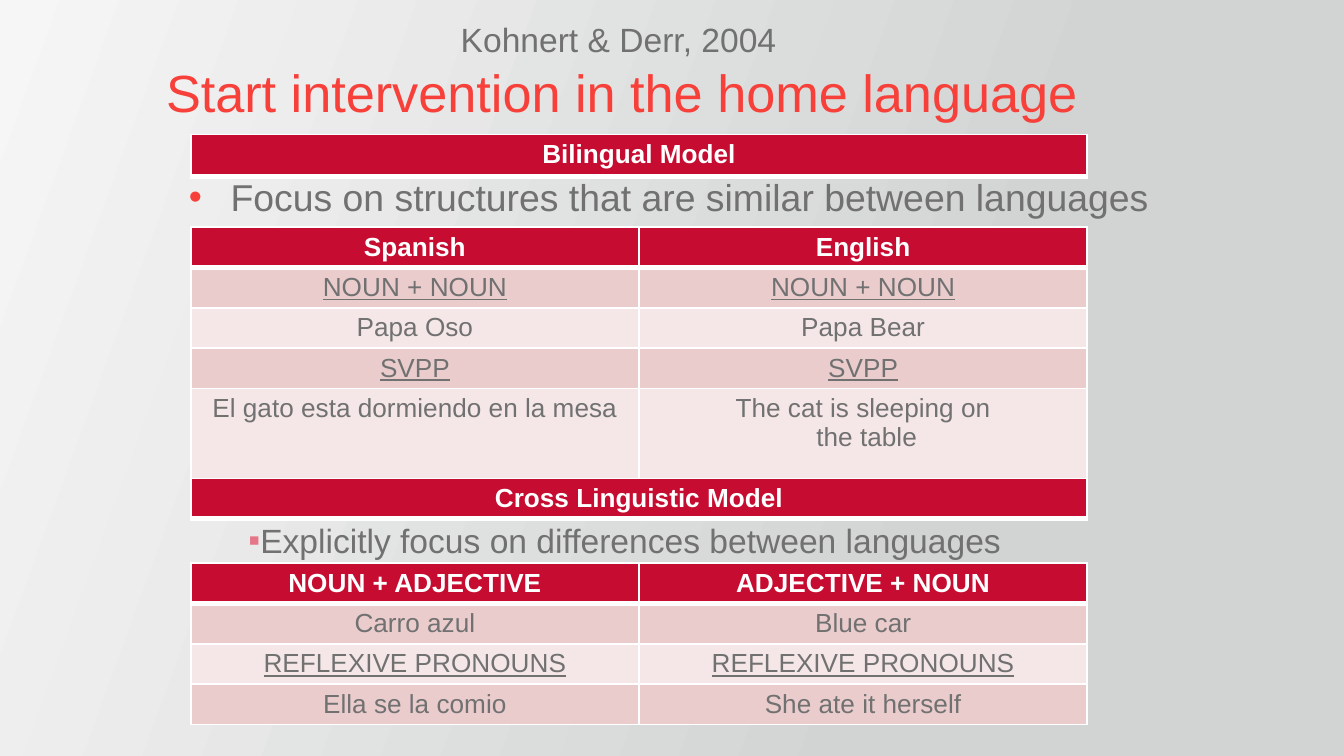
from dataclasses import dataclass
from typing import Optional

from lxml.etree import SubElement
from pptx import Presentation
from pptx.dml.color import RGBColor
from pptx.enum.text import MSO_ANCHOR, PP_ALIGN
from pptx.oxml.ns import qn
from pptx.util import Inches, Pt

RED = RGBColor(0xF7, 0x40, 0x3A)
CRIMSON = RGBColor(0xC6, 0x0C, 0x30)
PINK = RGBColor(0xE4, 0x76, 0x88)
ROSE = RGBColor(0xEA, 0xCC, 0xCD)
BLUSH = RGBColor(0xF5, 0xE7, 0xE8)
GRAY = RGBColor(0x71, 0x71, 0x71)
WHITE = RGBColor(0xFF, 0xFF, 0xFF)
PALE = RGBColor(0xF6, 0xF6, 0xF6)
SILVER = RGBColor(0xD1, 0xD4, 0xD3)

LEFT, WIDTH, ROW = 1.42, 6.67, 0.3


@dataclass
class Grid:
    top: float
    rows: list[tuple[str, ...]]
    heights: list[float]


@dataclass
class Bullet:
    sign: str
    color: RGBColor
    margin: float = 0
    indent: float = 0


@dataclass
class Note:
    text: str
    box: tuple[float, float, float, float]
    size: int
    align: PP_ALIGN = PP_ALIGN.LEFT
    bullet: Optional[Bullet] = None


GRIDS = [
    Grid(1, [("Bilingual Model",)], [0.31]),
    Grid(1.69, [
        ("Spanish", "English"),
        ("NOUN + NOUN", "NOUN + NOUN"),
        ("Papa Oso", "Papa Bear"),
        ("SVPP", "SVPP"),
        ("El gato esta dormiendo en la mesa",
         "The cat is sleeping on\n the table"),
    ], [ROW] * 4 + [0.75]),
    Grid(3.56, [("Cross Linguistic Model",)], [ROW]),
    Grid(4.19, [
        ("NOUN + ADJECTIVE", "ADJECTIVE + NOUN"),
        ("Carro azul", "Blue car"),
        ("REFLEXIVE PRONOUNS", "REFLEXIVE PRONOUNS"),
        ("Ella se la comio", "She ate it herself"),
    ], [ROW] * 4),
]

NOTES = [
    Note("Focus on structures that are similar between languages",
         (0.6, 1.25, 8.26, 0.42), 20, PP_ALIGN.CENTER,
         Bullet("•", RED, 0.81, -0.31)),
    Note("Explicitly focus on differences between languages",
         (1.75, 3.82, 5.95, 0.39), 18, bullet=Bullet("▪", PINK)),
    Note("Kohnert & Derr, 2004", (3.33, 0.09, 3, 0.4), 18),
]


def style(para, size: int, color: RGBColor, align: PP_ALIGN) -> None:
    para.alignment = align
    para.font.name = "Arial"
    para.font.size = Pt(size)
    para.font.color.rgb = color


def place(shape, box: tuple[float, float, float, float]) -> None:
    shape.left, shape.top, shape.width, shape.height = map(Inches, box)


def add_bullet(para, bullet: Bullet) -> None:
    props = para._p.get_or_add_pPr()
    props.set("marL", str(Inches(bullet.margin)))
    props.set("indent", str(Inches(bullet.indent)))
    tint = SubElement(props, qn("a:buClr"))
    SubElement(tint, qn("a:srgbClr"), val=str(bullet.color))
    SubElement(props, qn("a:buFont"), typeface="Arial")
    SubElement(props, qn("a:buChar"), char=bullet.sign)


def add_note(slide, note: Note) -> None:
    frame = slide.shapes.add_textbox(*map(Inches, note.box)).text_frame
    frame.word_wrap = True
    para = frame.paragraphs[0]
    para.text = note.text
    if note.bullet:
        add_bullet(para, note.bullet)
    style(para, note.size, GRAY, note.align)


def add_edges(cell, base: int) -> None:
    """Draw white cell borders, with the bottom one base points wide."""
    props = cell._tc.get_or_add_tcPr()
    for side, width in (("L", 1), ("R", 1), ("T", 1), ("B", base)):
        line = SubElement(props, qn(f"a:ln{side}"), w=str(Pt(width)))
        fill = SubElement(line, qn("a:solidFill"))
        SubElement(fill, qn("a:srgbClr"), val=str(WHITE))


def fill_cell(cell, text: str, row: int) -> None:
    head = row == 0
    cell.text = text
    cell.margin_left = cell.margin_right = Inches(0.1)
    cell.margin_top = cell.margin_bottom = Inches(0.04)
    add_edges(cell, 3 if head else 1)
    cell.fill.solid()
    cell.fill.fore_color.rgb = CRIMSON if head else (BLUSH, ROSE)[row % 2]
    for para in cell.text_frame.paragraphs:
        style(para, 14, WHITE if head else GRAY, PP_ALIGN.CENTER)
        para.font.bold = head
        para.font.underline = not head and text.isupper()


def add_grid(slide, grid: Grid) -> None:
    table = slide.shapes.add_table(
        len(grid.rows), len(grid.rows[0]), Inches(LEFT), Inches(grid.top),
        Inches(WIDTH), Inches(sum(grid.heights))).table
    table.horz_banding = False
    for row, texts in enumerate(grid.rows):
        table.rows[row].height = Inches(grid.heights[row])
        for col, text in enumerate(texts):
            fill_cell(table.cell(row, col), text, row)


def set_back(slide) -> None:
    fill = slide.background.fill
    fill.gradient()
    fill.gradient_angle = 340
    for stop, color, pos in zip(fill.gradient_stops, (PALE, SILVER), (0, 0.7)):
        stop.color.rgb = color
        stop.position = pos


def set_title(slide) -> None:
    title = slide.shapes.title
    place(title, (-0.25, 0.4, 9.75, 0.92))
    frame = title.text_frame
    frame.text = "Start intervention in the home language"
    frame.vertical_anchor = MSO_ANCHOR.TOP
    style(frame.paragraphs[0], 28, RED, PP_ALIGN.CENTER)


def main() -> None:
    deck = Presentation()
    deck.slide_width, deck.slide_height = Inches(10), Inches(10 * 9 / 16)
    slide = deck.slides.add_slide(deck.slide_layouts[5])
    set_back(slide)
    set_title(slide)
    for grid in GRIDS:
        add_grid(slide, grid)
    for note in NOTES:
        add_note(slide, note)
    deck.save("out.pptx")


if __name__ == "__main__":
    main()
